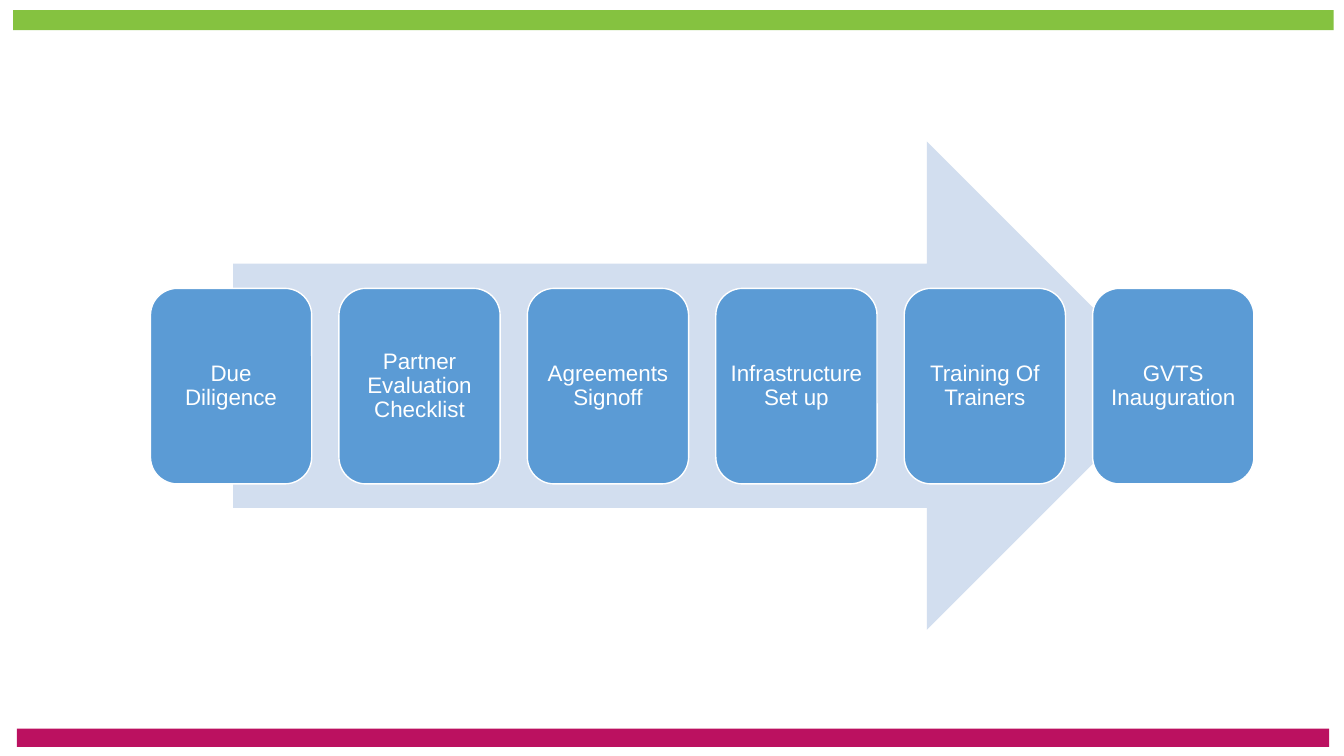
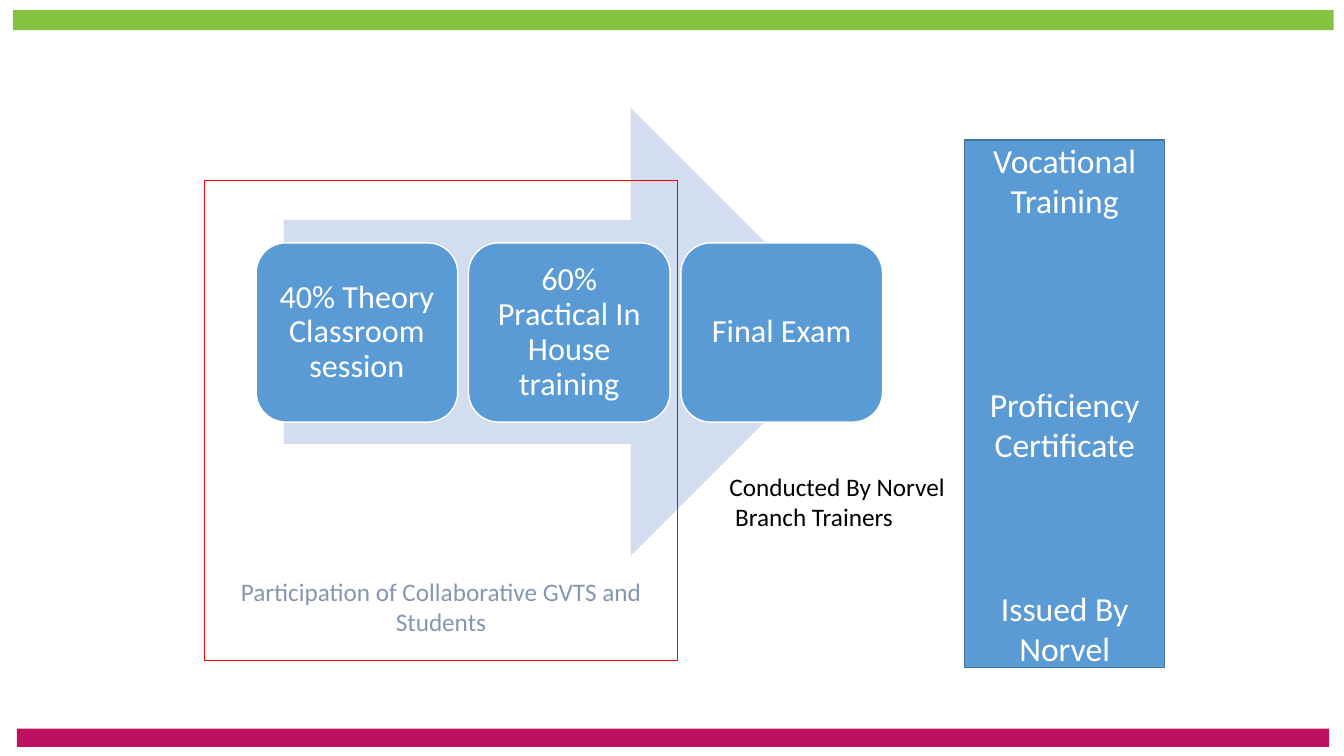
from dataclasses import dataclass

from pptx import Presentation
from pptx.dml.color import RGBColor
from pptx.enum.shapes import MSO_SHAPE
from pptx.enum.text import MSO_ANCHOR, PP_ALIGN
from pptx.util import Pt


@dataclass(frozen=True)
class Theme:
    green: str = "85C240"
    magenta: str = "BB1160"
    pale: str = "D2DEEF"
    blue: str = "5B9BD5"
    edge: str = "43739E"
    red: str = "FF0000"
    slate: str = "8497B0"
    white: str = "FFFFFF"
    black: str = "000000"
    small: int = 16
    note: int = 18
    step: float = 23
    large: int = 24


T = Theme()

# Content; boxes are left, top, width, height in points
BANDS = [((12, 520.5, 937.5, 13), T.magenta), ((9.4, 7.2, 943.2, 14.4), T.green)]

SETUP = {
    "steps": ["Due Diligence", "Partner Evaluation Checklist", "Agreements Signoff",
              "Infrastructure Set up", "Training Of Trainers", "GVTS Inauguration"],
    "arrow": (166.5, 101, 670, 349),
    "first": (107.5, 206, 115.2, 139.7),
    "gap": 19.4,
    "inset": 4,
    "font": {"name": "Arial", "size": T.small},
}
COURSE = {
    "steps": ["40% Theory Classroom session", "60% Practical In House training",
              "Final Exam"],
    "arrow": (202.5, 77, 408, 320),
    "first": (183, 173.5, 144, 128),
    "gap": 7.7,
    "inset": 7,
    "font": {"name": "Calibri", "size": T.step},
}

# Each paragraph is its text and the space before it
PARTICIPANTS = [("Participation of Collaborative GVTS and Students", 0)]
EXAMINERS = [("Conducted By Norvel", 0), (" Branch Trainers", 0)]
CERTIFICATE = [("Vocational Training", 0), ("Proficiency Certificate", 117),
               ("Issued By Norvel", 88)]


# Helpers
def rgb(value):
    return RGBColor.from_string(value)


def add_shape(slide, kind, box, fill=None, line=None):
    sp = slide.shapes.add_shape(kind, *map(Pt, box))
    sp.shadow.inherit = False
    if fill:
        sp.fill.solid()
        sp.fill.fore_color.rgb = rgb(fill)
    else:
        sp.fill.background()
    if line:
        sp.line.color.rgb = rgb(line)
        sp.line.width = Pt(1)
    else:
        sp.line.fill.background()
    return sp


def set_text(sp, paragraphs, size, color, name="Calibri", frame=None, para=None):
    tf = sp.text_frame
    for key, value in {"word_wrap": True, **(frame or {})}.items():
        setattr(tf, key, value)
    for i, (text, before) in enumerate(paragraphs):
        p = tf.paragraphs[0] if i == 0 else tf.add_paragraph()
        layout = {"alignment": PP_ALIGN.CENTER, "space_before": Pt(before)}
        for key, value in {**layout, **(para or {})}.items():
            setattr(p, key, value)
        r = p.add_run()
        r.text = text
        for key, value in {"name": name, "size": Pt(size)}.items():
            setattr(r.font, key, value)
        r.font.color.rgb = rgb(color)


def add_slide(prs):
    slide = prs.slides.add_slide(prs.slide_layouts[6])
    for box, color in BANDS:
        add_shape(slide, MSO_SHAPE.RECTANGLE, box, color)
    return slide


def add_process(slide, process):
    add_shape(slide, MSO_SHAPE.RIGHT_ARROW, process["arrow"], T.pale)
    left, top, width, height = process["first"]
    sides = ("margin_left", "margin_right", "margin_top", "margin_bottom")
    frame = {"vertical_anchor": MSO_ANCHOR.MIDDLE,
             **dict.fromkeys(sides, Pt(process["inset"]))}
    for i, step in enumerate(process["steps"]):
        box = (left + i * (width + process["gap"]), top, width, height)
        sp = add_shape(slide, MSO_SHAPE.ROUNDED_RECTANGLE, box, T.blue, T.white)
        set_text(sp, [(step, 0)], color=T.white, frame=frame,
                 para={"line_spacing": 0.9}, **process["font"])


def main():
    prs = Presentation()
    prs.slide_width, prs.slide_height = Pt(960), Pt(540)

    # Setting up a centre
    add_process(add_slide(prs), SETUP)

    # Course and certificate
    slide = add_slide(prs)
    add_process(slide, COURSE)
    sp = add_shape(slide, MSO_SHAPE.RECTANGLE, (146, 129, 338, 343), line=T.red)
    set_text(sp, PARTICIPANTS, T.note, T.slate,
             frame={"vertical_anchor": MSO_ANCHOR.BOTTOM, "margin_bottom": Pt(17)})
    sp = slide.shapes.add_textbox(*map(Pt, (514, 333, 172, 51)))
    set_text(sp, EXAMINERS, T.note, T.black, para={"alignment": PP_ALIGN.LEFT})
    sp = add_shape(slide, MSO_SHAPE.RECTANGLE, (689, 100, 143, 377), T.blue, T.edge)
    set_text(sp, CERTIFICATE, T.large, T.white,
             frame={"vertical_anchor": MSO_ANCHOR.MIDDLE})

    prs.save("out.pptx")


if __name__ == "__main__":
    main()
